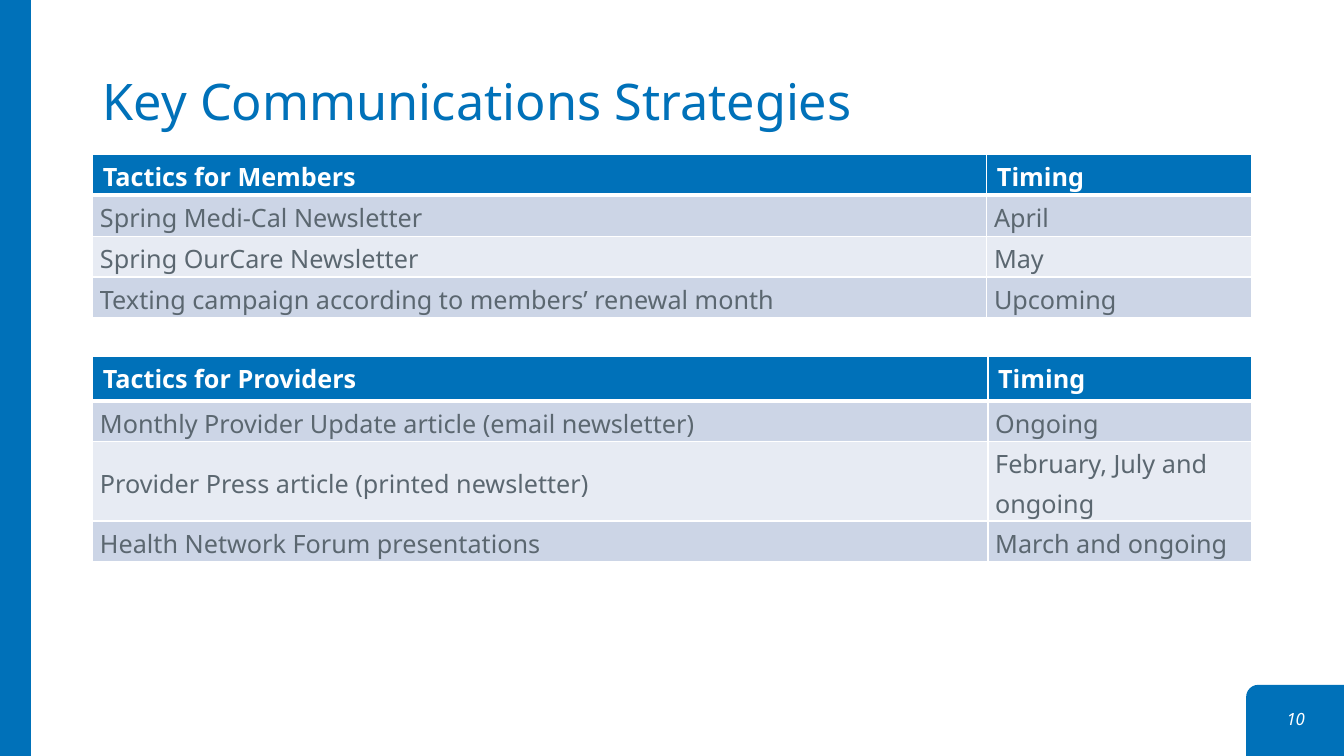
from dataclasses import dataclass

from pptx import Presentation
from pptx import util as u
from pptx.dml.color import RGBColor
from pptx.enum import shapes, text
from pptx.oxml import parse_xml
from pptx.oxml.ns import nsdecls

Cm = u.Cm


@dataclass(frozen=True)
class Theme:
    font: str = "Noto Sans"
    blue: str = "0071B9"
    grey: str = "5B6770"
    white: str = "FFFFFF"
    bands: tuple = ("CCD5E6", "E7EBF3")
    title_size: int = 36
    table_size: int = 18
    number_size: int = 12


THEME = Theme()
LEFT, WIDTH = 2.34, 29.21

MEMBERS = [
    ("Tactics for Members", "Timing"),
    ("Spring Medi-Cal Newsletter", "April"),
    ("Spring OurCare Newsletter", "May"),
    ("Texting campaign according to members’ renewal month", "Upcoming"),
]
PROVIDERS = [
    ("Tactics for Providers", "Timing"),
    ("Monthly Provider Update article (email newsletter)", "Ongoing"),
    ("Provider Press article (printed newsletter)", "February, July and ongoing"),
    ("Health Network Forum presentations", "March and ongoing"),
]


def style(p, size, color, bold=False, italic=False):
    f = p.font
    f.name, f.size, f.bold, f.italic = THEME.font, u.Pt(size), bold, italic
    f.color.rgb = RGBColor.from_string(color)


def add_block(s, kind, left, top, width, height, rotation=0):
    """Plain blue shape without outline."""
    sp = s.shapes.add_shape(kind, Cm(left), Cm(top), Cm(width), Cm(height))
    sp.rotation = rotation
    sp.shadow.inherit = False
    sp.fill.solid()
    sp.fill.fore_color.rgb = RGBColor.from_string(THEME.blue)
    sp.line.fill.background()


def add_text(s, words, left, top, width, height, anchor):
    """Wrapping text box; returns its paragraph."""
    sp = s.shapes.add_textbox(Cm(left), Cm(top), Cm(width), Cm(height))
    tf = sp.text_frame
    tf.word_wrap = True
    tf.vertical_anchor = anchor
    p = tf.paragraphs[0]
    p.text = words
    return p


def set_borders(cell, bottom):
    """White cell borders, one point wide except at the bottom."""
    tcPr = cell._tc.get_or_add_tcPr()
    for i, (side, width) in enumerate(zip("LRTB", (1, 1, 1, bottom))):
        tcPr.insert(i, parse_xml(
            f'<a:ln{side} {nsdecls("a")} w="{u.Pt(width)}"><a:solidFill>'
            f'<a:srgbClr val="{THEME.white}"/></a:solidFill></a:ln{side}>'))


def fill_cell(cell, words, row):
    header = row == 0
    cell.text = words
    p = cell.text_frame.paragraphs[0]
    if header:
        color = THEME.blue
        style(p, THEME.table_size, THEME.white, bold=True)
    else:
        color = THEME.bands[(row - 1) % 2]
        style(p, THEME.table_size, THEME.grey)
        p.line_spacing = 1.15
        cell.vertical_anchor = text.MSO_ANCHOR.MIDDLE
        cell.margin_left = cell.margin_right = Cm(0.18)
        cell.margin_top = cell.margin_bottom = 0
    cell.fill.solid()
    cell.fill.fore_color.rgb = RGBColor.from_string(color)
    set_borders(cell, 3 if header else 1)


def add_tactics(s, rows, top, heights, first_width):
    table = s.shapes.add_table(len(rows), 2, Cm(LEFT), Cm(top), Cm(WIDTH),
                               Cm(sum(heights))).table
    table.columns[0].width = Cm(first_width)
    table.columns[1].width = Cm(WIDTH - first_width)
    for i, (row, height) in enumerate(zip(rows, heights)):
        table.rows[i].height = Cm(height)
        for j, words in enumerate(row):
            fill_cell(table.cell(i, j), words, i)


def main():
    prs = Presentation()
    prs.slide_width, prs.slide_height = Cm(33.87), Cm(19.05)
    s = prs.slides.add_slide(prs.slide_layouts[6])

    # Side bar and page number tab
    add_block(s, shapes.MSO_SHAPE.ROUND_1_RECTANGLE, 31.72, 16.94, 1.83, 2.46, 270)
    p = add_text(s, "10", 31.83, 17.73, 1.65, 0.76, text.MSO_ANCHOR.MIDDLE)
    p.alignment = text.PP_ALIGN.CENTER
    style(p, THEME.number_size, THEME.white, italic=True)
    add_block(s, shapes.MSO_SHAPE.RECTANGLE, 0, 0, 0.78, 19.05)

    # Title
    p = add_text(s, "Key Communications Strategies", LEFT, 0.66, WIDTH, 2.79,
                 text.MSO_ANCHOR.BOTTOM)
    p.line_spacing = 0.9
    style(p, THEME.title_size, THEME.blue)

    # Tables; the two-line provider row is taller
    add_tactics(s, MEMBERS, 3.89, [1.03] * 4, 22.53)
    add_tactics(s, PROVIDERS, 8.99, [1.12, 1.02, 2, 1.03], 22.56)

    prs.save("out.pptx")


if __name__ == "__main__":
    main()
